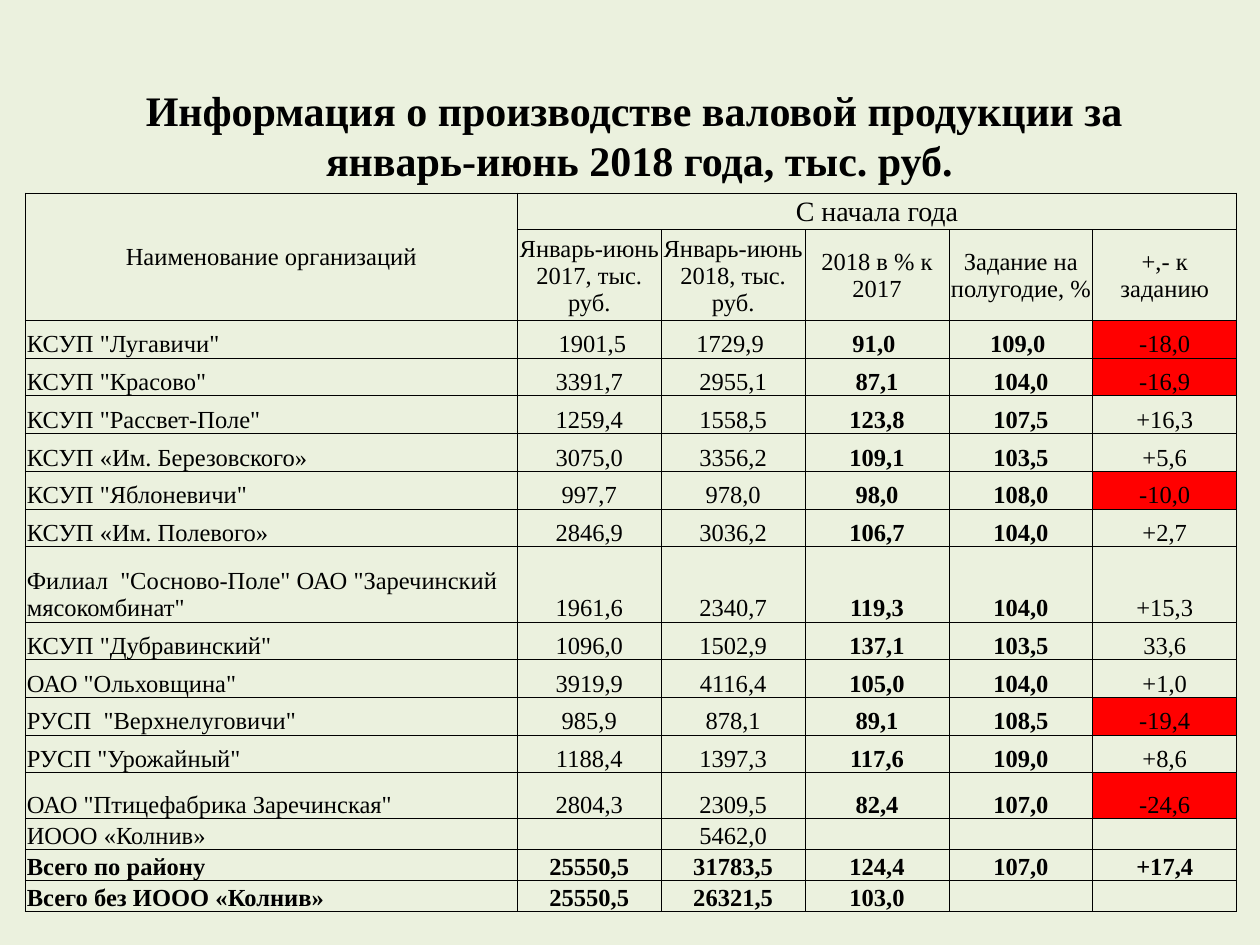
from dataclasses import dataclass

from lxml.etree import SubElement
from pptx import Presentation
from pptx.dml.color import RGBColor
from pptx.enum.text import MSO_ANCHOR as ANCHOR, PP_ALIGN as ALIGN
from pptx.oxml import parse_xml
from pptx.oxml.ns import nsdecls, qn
from pptx.util import Cm, Pt

BLACK = RGBColor(0x00, 0x00, 0x00)
RED = RGBColor(0xFF, 0x00, 0x00)
PALE_GREEN = RGBColor(0xEB, 0xF1, 0xDE)
FONT = "Times New Roman"
BODY_SIZE = 14
COLUMN_WIDTHS = [9.92] + [2.9] * 5
BOLD_COLUMNS = (3, 4)


@dataclass
class Row:
    cells: tuple[str, ...]
    height: float = 0.76
    bold: bool = False


HEADERS = [
    Row(("Наименование организаций", "С начала года", "", "", "", ""), 0.74),
    Row(("", "Январь-июнь 2017, тыс. руб.", "Январь-июнь 2018, тыс. руб.",
         "2018 в % к 2017", "Задание на полугодие, %", "+,- к заданию"), 1.83),
]
ORGANIZATIONS = [
    Row(('КСУП "Лугавичи"', " 1901,5", "1729,9 ", "91,0 ", "109,0 ", "-18,0")),
    Row(('КСУП "Красово"', "3391,7", "2955,1", "87,1", "104,0", "-16,9")),
    Row(('КСУП "Рассвет-Поле"', "1259,4", "1558,5", "123,8", "107,5", "+16,3")),
    Row(("КСУП «Им. Березовского»", "3075,0", "3356,2", "109,1", "103,5", "+5,6")),
    Row(('КСУП "Яблоневичи"', "997,7", "978,0", "98,0", "108,0", "-10,0")),
    Row(("КСУП «Им. Полевого»", "2846,9", "3036,2", "106,7", "104,0", "+2,7")),
    Row(('Филиал  "Сосново-Поле" ОАО "Заречинский мясокомбинат"',
         "1961,6", "2340,7", "119,3", "104,0", "+15,3"), 1.52),
    Row(('КСУП "Дубравинский"', "1096,0", "1502,9", "137,1", "103,5", "33,6")),
    Row(('ОАО "Ольховщина"', "3919,9", "4116,4", "105,0", "104,0", "+1,0")),
    Row(('РУСП  "Верхнелуговичи"', "985,9", "878,1", "89,1", "108,5", "-19,4")),
    Row(('РУСП "Урожайный"', "1188,4", "1397,3", "117,6", "109,0", "+8,6")),
    Row(('ОАО "Птицефабрика Заречинская"',
         "2804,3", "2309,5", "82,4", "107,0", "-24,6"), 0.92),
    Row(("ИООО «Колнив»", "", "5462,0", "", "", ""), 0.57),
]
TOTALS = [
    Row(("Всего по району", "25550,5", "31783,5", "124,4", "107,0", "+17,4"), 0.57, True),
    Row(("Всего без ИООО «Колнив»", "25550,5", "26321,5", "103,0", "", ""), 0.57, True),
]


def format_text(p, size: int, bold: bool, align) -> None:
    p.alignment = align
    for r in p.runs:
        r.font.name = FONT
        r.font.size = Pt(size)
        r.font.bold = bold
        r.font.color.rgb = BLACK
    if not p.runs:
        SubElement(p._p, qn("a:endParaRPr"), sz=str(size * 100))


def add_borders(cell) -> None:
    tc_pr = cell._tc.get_or_add_tcPr()
    for i, side in enumerate("LRTB"):
        tc_pr.insert(i, parse_xml(
            f'<a:ln{side} {nsdecls("a")} w="{Pt(0.5)}"><a:solidFill>'
            f'<a:srgbClr val="{BLACK}"/></a:solidFill></a:ln{side}>'))


def fill_cell(cell, text: str, size: int, bold: bool, align, anchor) -> None:
    cell.text_frame.text = text
    cell.margin_left = cell.margin_right = cell.margin_top = Cm(0.03)
    cell.margin_bottom = Cm(0)
    cell.vertical_anchor = anchor
    if text.startswith("-"):
        cell.fill.solid()
        cell.fill.fore_color.rgb = RED
    else:
        cell.fill.background()
    format_text(cell.text_frame.paragraphs[0], size, bold, align)
    add_borders(cell)


def add_title(slide, text: str) -> None:
    tf = slide.shapes.add_textbox(Cm(1.09), Cm(1.12), Cm(23.6), Cm(3.18)).text_frame
    tf.word_wrap = True
    tf.vertical_anchor = ANCHOR.MIDDLE
    p = tf.paragraphs[0]
    p.text = text
    format_text(p, 24, True, ALIGN.CENTER)


def add_output_table(slide, rows: list[Row]) -> None:
    table = slide.shapes.add_table(
        len(rows), len(COLUMN_WIDTHS), Cm(0.51), Cm(3.89),
        Cm(sum(COLUMN_WIDTHS)), Cm(sum(row.height for row in rows))).table
    table.first_row = table.horz_banding = False
    for column, width in zip(table.columns, COLUMN_WIDTHS):
        column.width = Cm(width)
    for i, row in enumerate(rows):
        table.rows[i].height = Cm(row.height)
        header = i < len(HEADERS)
        for j, text in enumerate(row.cells):
            fill_cell(
                table.cell(i, j), text,
                16 if i == 0 and j > 0 else BODY_SIZE,
                row.bold or (not header and j in BOLD_COLUMNS),
                ALIGN.CENTER if header or j else ALIGN.LEFT,
                ANCHOR.MIDDLE if header else ANCHOR.BOTTOM)
    table.cell(0, 0).merge(table.cell(1, 0))
    table.cell(0, 1).merge(table.cell(0, 5))


def main() -> None:
    prs = Presentation()
    prs.slide_width, prs.slide_height = Cm(25.4), Cm(19.05)
    slide = prs.slides.add_slide(prs.slide_layouts[6])
    slide.background.fill.solid()
    slide.background.fill.fore_color.rgb = PALE_GREEN
    add_title(slide, "Информация о производстве валовой продукции за \vянварь-июнь 2018 года, тыс. руб.")
    add_output_table(slide, HEADERS + ORGANIZATIONS + TOTALS)
    prs.save("out.pptx")


if __name__ == "__main__":
    main()
